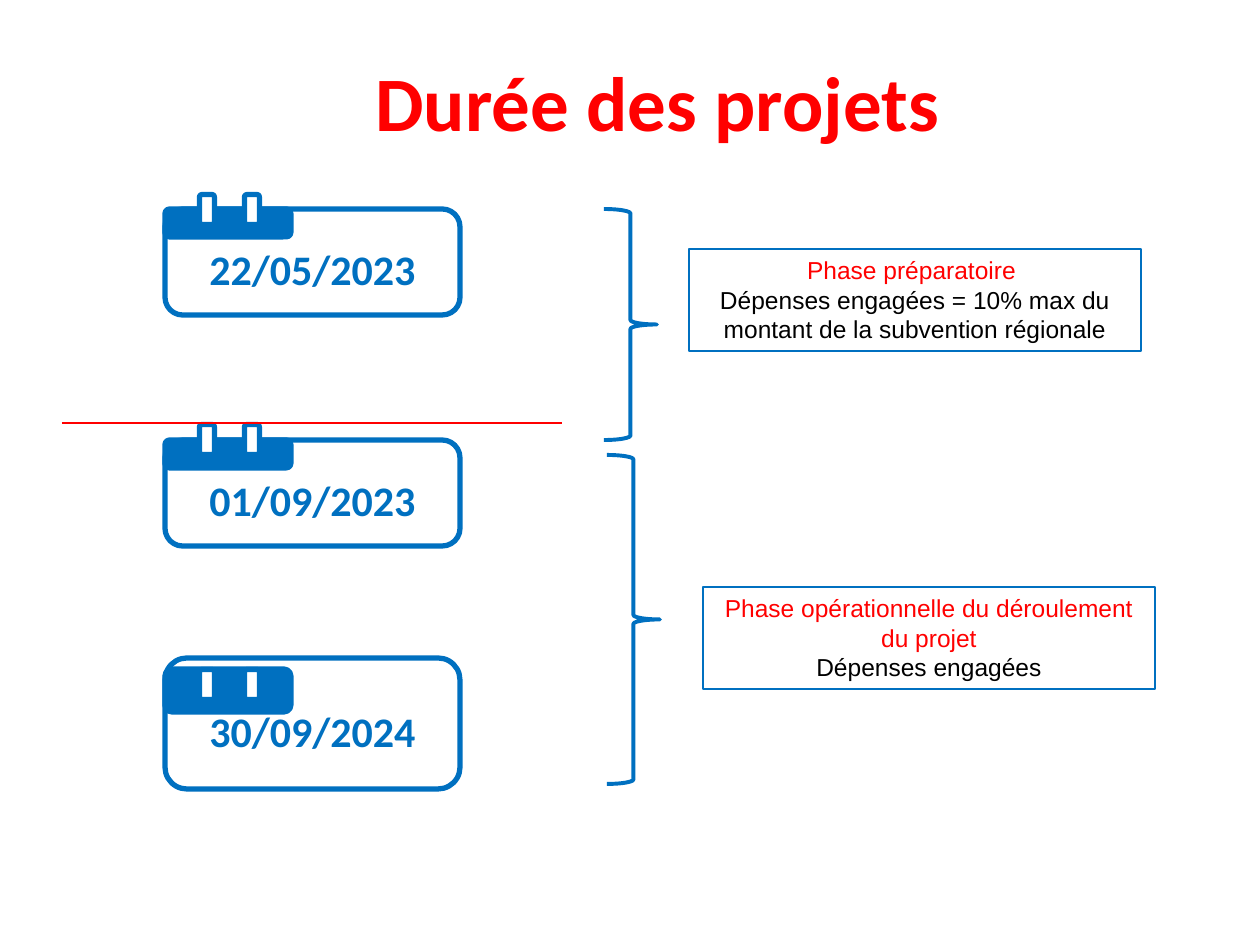
from pptx import Presentation
from pptx.dml.color import RGBColor
from pptx.enum.shapes import MSO_CONNECTOR, MSO_SHAPE
from pptx.enum.text import MSO_ANCHOR, MSO_AUTO_SIZE, PP_ALIGN
from pptx.oxml.ns import qn
from pptx.util import Emu, Pt
from lxml.etree import SubElement

RED = RGBColor(0xFF, 0x00, 0x00)
BLUE = RGBColor(0x00, 0x70, 0xC0)
BLACK = RGBColor(0x00, 0x00, 0x00)
WHITE = RGBColor(0xFF, 0xFF, 0xFF)

# Content: lengths in px, 126 to the inch
TITLE = " Durée des projets"
# date, card top, card height, tab top, tab height, ring top
DATES = [
    ("22/05/2023", 209, 106, 209, 28, 202),
    ("01/09/2023", 440, 106, 440, 28, 432),
    ("30/09/2024", 658, 131, 669, 43, 677),
]
# heading, detail, note box, brace box
PHASES = [
    ("Phase préparatoire ",
     "Dépenses engagées = 10% max du montant de la subvention régionale",
     (689, 249, 452, 102), (604, 209, 53, 231)),
    ("Phase opérationnelle du déroulement du projet",
     "Dépenses engagées",
     (703, 587, 452, 102), (607, 455, 53, 329)),
]
CARD_X, CARD_W, TAB_W = 165, 295, 126
RING_X, RING_GAP, RING_W, RING_H = 192, 45, 30, 15


def px(n):
    return Emu(round(n * 914400 / 126))


def write(frame, text, size=14, font="Arial", color=BLACK, bold=False,
          first=True, spacing=None):
    para = frame.paragraphs[0] if first else frame.add_paragraph()
    para.alignment = PP_ALIGN.CENTER
    if spacing:
        para.line_spacing = spacing
    run = para.add_run()
    run.text = text
    run.font.size, run.font.name = Pt(size), font
    run.font.bold = bold
    run.font.color.rgb = color


def draw(parent, kind, box, fill=None, width=3):
    shape = parent.add_shape(kind, *map(px, box))
    shape.shadow.inherit = False
    if fill is None:
        shape.fill.background()
    else:
        shape.fill.solid()
        shape.fill.fore_color.rgb = fill
    shape.line.color.rgb = BLUE
    shape.line.width = Pt(width)
    return shape


def inset(frame, left, top, right, bottom):
    frame.margin_left, frame.margin_top = px(left), px(top)
    frame.margin_right, frame.margin_bottom = px(right), px(bottom)


def add_date(shapes, date, top, high, tab_top, tab_high, ring_top):
    group = shapes.add_group_shape().shapes
    round_box = MSO_SHAPE.ROUNDED_RECTANGLE
    card = draw(group, round_box, (CARD_X, top, CARD_W, high), WHITE)
    frame = card.text_frame
    frame.word_wrap = True
    frame.vertical_anchor = MSO_ANCHOR.MIDDLE
    inset(frame, 5, 20, 5, 6)
    write(frame, date, size=24, font="Calibri", color=BLUE, bold=True)
    draw(group, round_box, (CARD_X, tab_top, TAB_W, tab_high), BLUE)
    for i in range(2):
        box = (RING_X + i * RING_GAP, ring_top, RING_W, RING_H)
        draw(group, round_box, box, WHITE).rotation = 270


def add_phase(shapes, head, detail, note_box, brace_box):
    draw(shapes, MSO_SHAPE.RIGHT_BRACE, brace_box, width=2.25)
    note = draw(shapes, MSO_SHAPE.RECTANGLE, note_box, width=0.75)
    frame = note.text_frame
    frame.word_wrap = True
    frame.auto_size = MSO_AUTO_SIZE.SHAPE_TO_FIT_TEXT
    frame.vertical_anchor = MSO_ANCHOR.TOP
    write(frame, head, color=RED)
    write(frame, detail, first=False)


def main():
    deck = Presentation()
    deck.slide_width, deck.slide_height = px(1260), px(945)
    slide = deck.slides.add_slide(deck.slide_layouts[5])
    shapes = slide.shapes

    # Title
    title = shapes.title
    title.left, title.top, title.width, title.height = map(
        px, (312, 15, 674, 183))
    title.text_frame.vertical_anchor = MSO_ANCHOR.MIDDLE
    write(title.text_frame, TITLE, size=44, font="Calibri", color=RED,
          bold=True, spacing=0.9)

    # Calendar cards
    for row in DATES:
        add_date(shapes, *row)

    # Braces and notes
    for row in PHASES:
        add_phase(shapes, *row)

    # Divider
    rule = shapes.add_connector(
        MSO_CONNECTOR.STRAIGHT, px(62), px(423), px(562), px(423))
    rule.line.color.rgb = RED
    rule.line.width = Pt(0.75)
    SubElement(rule._element.spPr, qn("a:effectLst"))

    deck.save("out.pptx")


if __name__ == "__main__":
    main()
